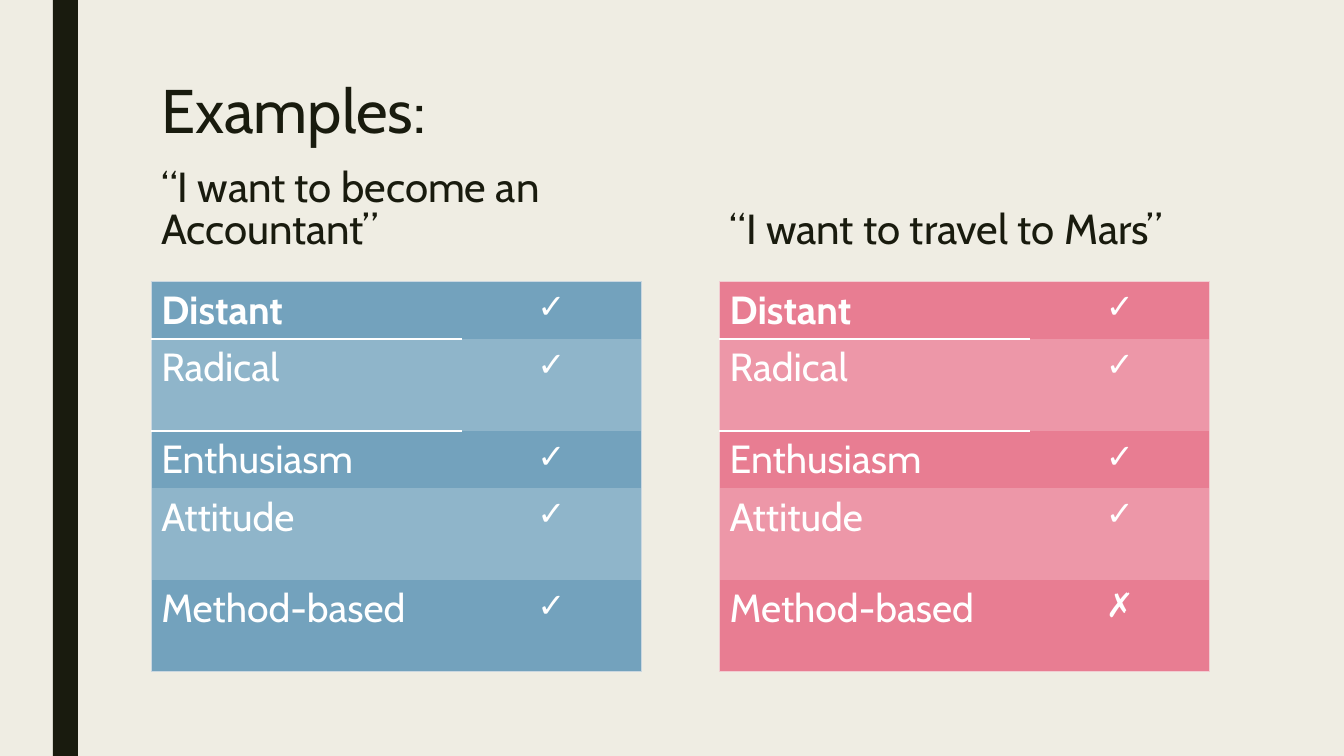
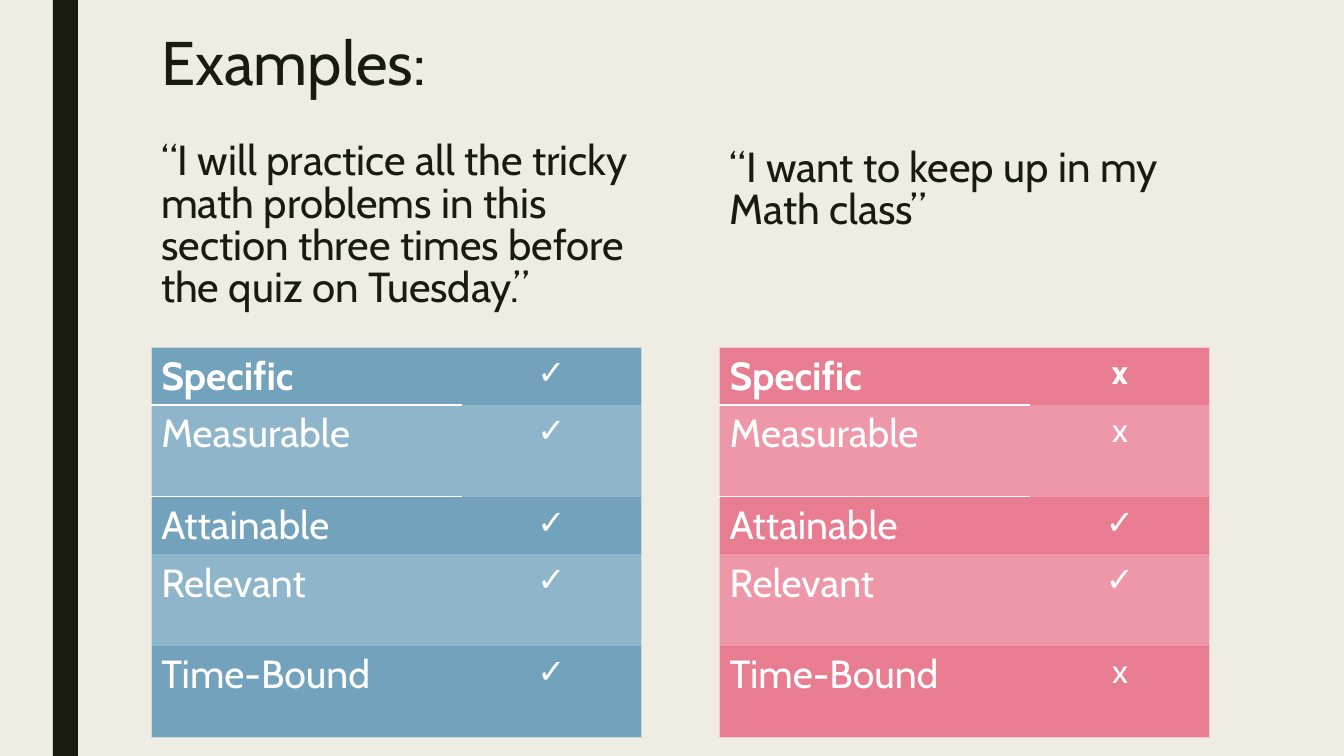
from pptx import Presentation
from pptx.dml.color import RGBColor
from pptx.enum.shapes import MSO_SHAPE as SHAPE
from pptx.enum.text import MSO_ANCHOR as ANCHOR, PP_ALIGN as ALIGN
from pptx.oxml import parse_xml
from pptx.oxml.ns import nsdecls, qn
from pptx.util import Pt

COLORS = {"paper": "EFEDE3", "ink": "191B0E", "white": "FFFFFF"}
THEMES = [
    {"dark": "73A2BD", "light": "8FB5CA", "edge": "CAD7E0"},
    {"dark": "E87D92", "light": "ED97A8", "edge": "F1CDD2"},
]
FONT = "Cabin"
PLAIN_TABLE = "{2D5ABB26-0587-4C30-8999-92F81FD0307C}"

# Quote positions are (top, height) in points.
SLIDES = [
    {
        "title": "Examples:", "title_top": 54, "table_top": 201,
        "criteria": ["Distant", "Radical", "Enthusiasm", "Attitude", "Method-based"],
        "goals": [
            {"quote": "“I want to become an Accountant”",
             "place": (119.5, 65), "marks": "✓✓✓✓✓"},
            {"quote": "“I want to travel to Mars”",
             "place": (119.5, 65), "marks": "✓✓✓✓✗"},
        ],
    },
    {
        "title": "Examples:", "title_top": 20, "table_top": 248,
        "criteria": ["Specific", "Measurable", "Attainable", "Relevant", "Time-Bound"],
        "goals": [
            {"quote": "“I will practice all the tricky math problems in this "
                      "section three times before the quiz on Tuesday.”",
             "place": (80, 146), "marks": "✓✓✓✓✓"},
            {"quote": "“I want to keep up in my Math class”",
             "place": (105, 65), "marks": "xx✓✓x"},
        ],
    },
]

PAGE_WIDTH, PAGE_HEIGHT = 960, 540
BAR_LEFT, BAR_WIDTH = 37.7, 18
LEFT, TITLE_WIDTH, TITLE_HEIGHT = 108, 756, 117
COLUMN_WIDTHS = [222, 128]
GOAL_WIDTH = sum(COLUMN_WIDTHS)
GOAL_STEP = TITLE_WIDTH - GOAL_WIDTH
ROW_HEIGHTS = [41.2, 65.5, 41.2, 65.5, 65.5]

TITLE_STYLE = {"size": Pt(44), "name": FONT}
QUOTE_STYLE = {"size": Pt(30), "name": FONT}
LABEL_STYLE = {"size": Pt(28), "name": FONT}
MARK_STYLE = {"size": Pt(24), "name": FONT}


def write(frame, text, style, color, **layout):
    para = frame.paragraphs[0]
    for name, value in layout.items():
        setattr(para, name, value)
    span = para.add_run()
    span.text = text
    for name, value in style.items():
        setattr(span.font, name, value)
    span.font.color.rgb = RGBColor.from_string(COLORS[color])


def add_text(page, area, text, style, spacing, anchor):
    box = page.shapes.add_textbox(*map(Pt, area))
    box.text_frame.word_wrap = True
    box.text_frame.vertical_anchor = anchor
    write(box.text_frame, text, style, "ink", line_spacing=spacing)


def add_bar(page):
    bar = page.shapes.add_shape(
        SHAPE.RECTANGLE, Pt(BAR_LEFT), 0, Pt(BAR_WIDTH), Pt(PAGE_HEIGHT))
    bar.shadow.inherit = False
    bar.fill.solid()
    bar.fill.fore_color.rgb = RGBColor.from_string(COLORS["ink"])
    bar.line.fill.background()


def set_borders(cell, borders):
    """Draw borders, given as side: (colour, width), in the order L, R, T, B."""
    props = cell._tc.get_or_add_tcPr()
    sides = [side for side in "LRTB" if side in borders]
    for index, side in enumerate(sides):
        color, width = borders[side]
        props.insert(index, parse_xml(
            f'<a:ln{side} {nsdecls("a")} w="{Pt(width)}"><a:solidFill>'
            f'<a:srgbClr val="{color}"/></a:solidFill></a:ln{side}>'))


def borders_at(row, column, edge):
    last_row, last_column = len(ROW_HEIGHTS) - 1, len(COLUMN_WIDTHS) - 1
    outer = {"L": column == 0, "R": column == last_column,
             "T": row == 0, "B": row == last_row}
    borders = {side: (edge, 0.5) for side, on_edge in outer.items() if on_edge}
    header_rule = (COLORS["white"], 1.5)
    if column == 0 and row < 2:
        borders["B" if row == 0 else "T"] = header_rule
    return borders


def add_checklist(page, left, top, criteria, marks, theme):
    frame = page.shapes.add_table(
        len(criteria), len(COLUMN_WIDTHS), Pt(left), Pt(top),
        Pt(GOAL_WIDTH), Pt(sum(ROW_HEIGHTS)))
    for style_id in frame.element.iter(qn("a:tableStyleId")):
        style_id.text = PLAIN_TABLE
    table = frame.table
    table.horz_banding = False
    for column, width in zip(table.columns, COLUMN_WIDTHS):
        column.width = Pt(width)
    for row, height in zip(table.rows, ROW_HEIGHTS):
        row.height = Pt(height)
    for row, texts in enumerate(zip(criteria, marks)):
        shade = theme["light" if row % 2 else "dark"]
        for column, text in enumerate(texts):
            cell = table.cell(row, column)
            cell.fill.solid()
            cell.fill.fore_color.rgb = RGBColor.from_string(shade)
            set_borders(cell, borders_at(row, column, theme["edge"]))
            style = MARK_STYLE if column else LABEL_STYLE
            write(cell.text_frame, text, {**style, "bold": row == 0}, "white",
                  alignment=ALIGN.CENTER if column else ALIGN.LEFT)


def build_page(deck, content):
    page = deck.slides.add_slide(deck.slide_layouts[6])
    add_bar(page)
    add_text(page, (LEFT, content["title_top"], TITLE_WIDTH, TITLE_HEIGHT),
             content["title"], TITLE_STYLE, 0.89, ANCHOR.TOP)
    for index, (goal, theme) in enumerate(zip(content["goals"], THEMES)):
        left = LEFT + index * GOAL_STEP
        top, height = goal["place"]
        add_text(page, (left, top, GOAL_WIDTH, height),
                 goal["quote"], QUOTE_STYLE, 0.84, ANCHOR.BOTTOM)
        add_checklist(page, left, content["table_top"],
                      content["criteria"], goal["marks"], theme)


def main():
    deck = Presentation()
    deck.slide_width, deck.slide_height = Pt(PAGE_WIDTH), Pt(PAGE_HEIGHT)
    backdrop = deck.slide_master.background.fill
    backdrop.solid()
    backdrop.fore_color.rgb = RGBColor.from_string(COLORS["paper"])
    for content in SLIDES:
        build_page(deck, content)
    deck.save("out.pptx")


if __name__ == "__main__":
    main()
